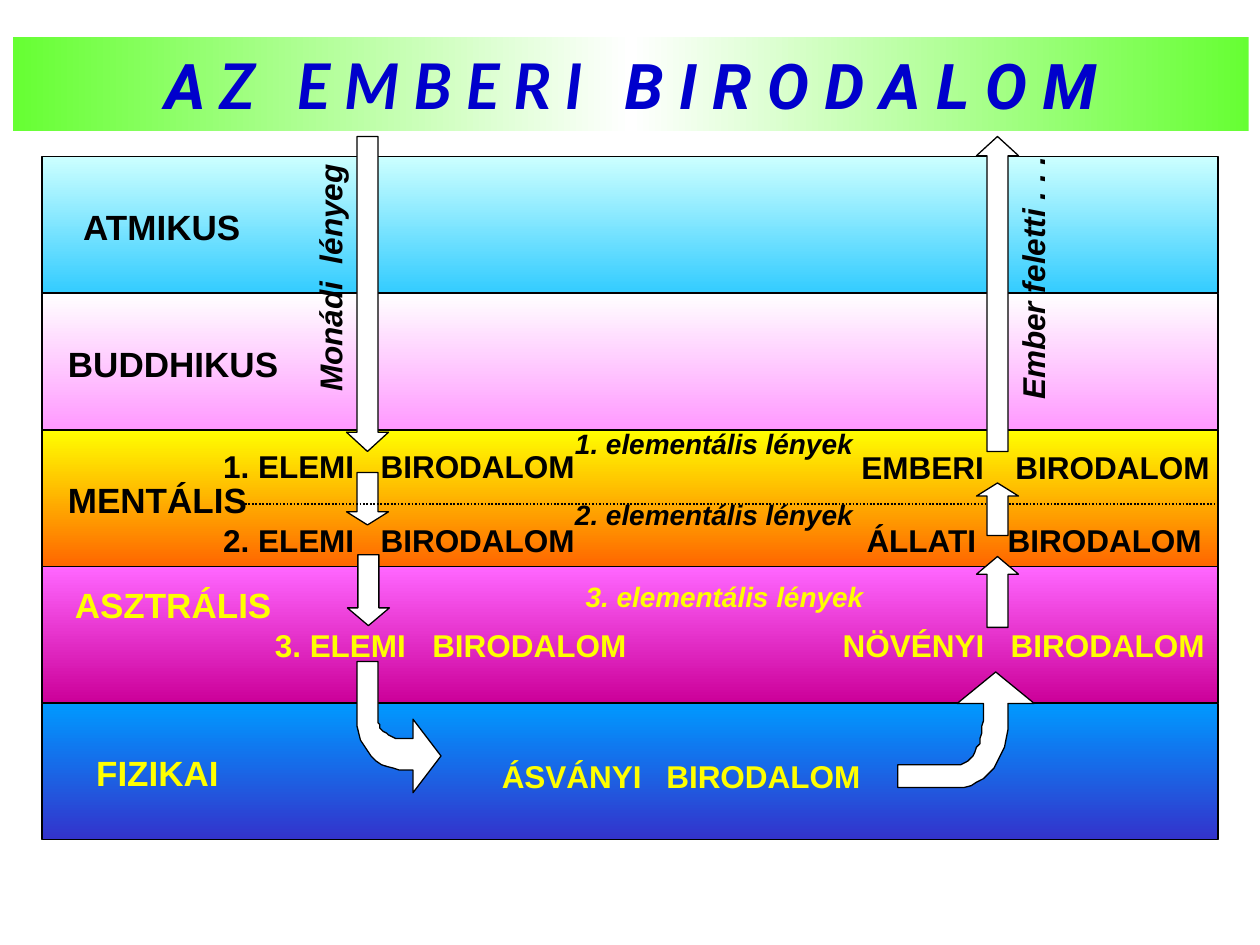
import copy
import pptx
import pptx.util
import pptx.dml.color
import pptx.enum.dml
import pptx.enum.shapes
import pptx.enum.text
import pptx.oxml
import pptx.oxml.ns

Pt = pptx.util.Pt
RGB = pptx.dml.color.RGBColor.from_string
SHAPES = pptx.enum.shapes.MSO_SHAPE
CENTER = pptx.enum.text.PP_ALIGN.CENTER
COLORS = {
    "black": "000000", "white": "FFFFFF", "yellow": "FFFF00", "title": "0000CC",
    "green": "66FF33", "ice": "CCFFFF", "sky": "33CCFF", "pink": "FF99FF",
    "orange": "FF6600", "orchid": "FF66FF", "magenta": "CC0099",
    "azure": "0099FF", "indigo": "3333CC",
}


def outline(shape):
    shape.shadow.inherit = False
    shape.line.color.rgb = RGB(COLORS["black"])
    shape.line.width = Pt(0.75)


def add_arrow(kind, left, top, height, head):
    arrow = page.shapes.add_shape(kind, Pt(left), Pt(top), Pt(24), Pt(height))
    arrow.adjustments[0] = 0.5
    arrow.adjustments[1] = head
    arrow.fill.solid()
    arrow.fill.fore_color.rgb = RGB(COLORS["white"])
    outline(arrow)


deck = pptx.Presentation()
deck.slide_width, deck.slide_height = Pt(720), Pt(540)
page = deck.slides.add_slide(deck.slide_layouts[5])

# Title bar, green fading to white in the middle
title = page.shapes.title
title.left, title.top, title.width, title.height = Pt(7.2), Pt(21), Pt(706.3), Pt(54)
title.fill.gradient()
title.fill.gradient_angle = 0
for stop in title.fill.gradient_stops:
    stop.color.rgb = RGB(COLORS["green"])
stop_list = title.element.spPr.find(".//" + pptx.oxml.ns.qn("a:gsLst"))
stop_list.insert(1, copy.deepcopy(stop_list[0]))
middle = title.fill.gradient_stops[1]
middle.position = 0.5
middle.color.rgb = RGB(COLORS["white"])
title.text_frame.vertical_anchor = pptx.enum.text.MSO_ANCHOR.MIDDLE
para = title.text_frame.paragraphs[0]
para.alignment = CENTER
for words, font, gap in [("A", "Roboto", 0), (" Z", "Lato", 0), (" ", "Lato", 16),
                         ("E M B E R I", "Lato", 0), (" ", "Lato", 16),
                         ("B I R O D A L O M", "Roboto", 0)]:
    span = para.add_run()
    span.text = words
    span.font.name = font
    span.font.size = Pt(36)
    span.font.bold = span.font.italic = True
    span.font.color.rgb = RGB(COLORS["title"])
    if gap:
        span.font._element.set("spc", str(gap * 100))

# Five planes, top to bottom
planes = [("ice", "sky"), ("white", "pink"), ("yellow", "orange"),
          ("orchid", "magenta"), ("azure", "indigo")]
for row, shades in enumerate(planes):
    band = page.shapes.add_shape(SHAPES.RECTANGLE, Pt(24), Pt(89.5 + 78.1 * row),
                                 Pt(672), Pt(78))
    band.fill.gradient()
    band.fill.gradient_angle = 270
    for place, (stop, shade) in enumerate(zip(band.fill.gradient_stops, shades)):
        stop.position = place
        stop.color.rgb = RGB(COLORS[shade])
    outline(band)

# Dotted divider of the mental plane, above the small left arrow
add_arrow(SHAPES.DOWN_ARROW, 198, 270, 30, 0.312)
divider = page.shapes.add_connector(pptx.enum.shapes.MSO_CONNECTOR.STRAIGHT,
                                    Pt(138), Pt(288), Pt(696), Pt(288))
divider.line.color.rgb = RGB(COLORS["black"])
divider.line.width = Pt(1)
divider.line.dash_style = pptx.enum.dml.MSO_LINE.ROUND_DOT
divider.element.spPr.append(pptx.oxml.parse_xml(
    f'<a:effectLst {pptx.oxml.ns.nsdecls("a")}/>'))

# Labels: words, left, top, width, size, color, italic, rotation, extra gap at "|"
labels = [
    ("ATMIKUS", 34.5, 114, 116, 20, "black", False, 0, 0),
    ("BUDDHIKUS", 30, 192, 138, 20, "black", False, 0, 0),
    ("MENTÁLIS", 30, 270, 120, 20, "black", False, 0, 0),
    ("ASZTRÁLIS", 30, 330, 138, 20, "yellow", False, 0, 0),
    ("FIZIKAI", 30, 426, 120, 20, "yellow", False, 0, 0),
    ("1. ELEMI|BIRODALOM", 120, 252, 216, 18, "black", False, 0, 10),
    ("2. ELEMI|BIRODALOM", 120, 294, 216, 18, "black", False, 0, 10),
    ("3. ELEMI|BIRODALOM", 120, 354, 275, 18, "yellow", False, 0, 10),
    ("ÁSVÁNYI|BIRODALOM", 274.5, 429, 229.5, 18, "yellow", False, 0, 9),
    ("NÖVÉNYI|BIRODALOM", 474, 354, 222, 18, "yellow", False, 0, 10),
    ("EMBERI|BIRODALOM", 481.5, 252.5, 220.5, 18, "black", False, 0, 13),
    ("ÁLLATI|BIRODALOM", 486, 294, 210, 18, "black", False, 0, 13),
    ("1. elementális lények", 318, 240, 180, 16, "black", True, 0, 0),
    ("2. elementális lények", 318, 281, 180, 16, "black", True, 0, 0),
    ("3. elementális lények", 318, 327.5, 192, 16, "yellow", True, 0, 0),
    ("Monádi|lényeg", 107.5, 144.5, 162, 18, "black", True, 270, 5),
    ("Ember feletti . . .", 509, 144.5, 162, 18, "black", True, 270, 0),
]
for words, left, top, width, size, color, italic, rotation, gap in labels:
    box = page.shapes.add_textbox(Pt(left), Pt(top), Pt(width), Pt(size * 1.2 + 7.2))
    box.rotation = rotation
    box.text_frame.word_wrap = False
    para = box.text_frame.paragraphs[0]
    para.alignment = CENTER
    for piece in words.replace("|", "| |").split("|"):
        span = para.add_run()
        span.text = piece
        span.font.name = "Arial"
        span.font.size = Pt(size)
        span.font.bold = True
        span.font.italic = italic
        span.font.color.rgb = RGB(COLORS[color])
        if piece == " ":
            span.font._element.set("spc", str(gap * 100))

# Straight arrows: descent on the left, ascent on the right
for kind, left, top, height, head in [
        (SHAPES.DOWN_ARROW, 198, 78, 180, 0.458),
        (SHAPES.DOWN_ARROW, 198.5, 317, 40.5, 0.422),
        (SHAPES.UP_ARROW, 558, 318, 40.5, 0.422),
        (SHAPES.UP_ARROW, 558, 276, 30, 0.312),
        (SHAPES.UP_ARROW, 558, 78, 180, 0.458)]:
    add_arrow(kind, left, top, height, head)

# Bent arrows: a pair is a corner, three pairs are a Bezier curve
bent_arrows = [
    [(252, 432), (236.5, 453), (236.5, 440.5), (232, 440.5),
     ((217, 440.5), (204, 428), (204, 411)), (204, 378), (216, 378), (216, 411),
     ((216, 417.5), (223, 422.5), (232, 422.5)), (236.5, 422.5), (236.5, 411)],
    [(569, 384), (591, 402.5), (576.5, 402.5), (576.5, 412),
     ((576.5, 433), (563, 450), (547, 450)), (513, 450), (513, 437), (547, 437),
     ((555, 437), (561.5, 426), (561.5, 412)), (561.5, 402.5), (547, 402.5)],
]
for outline_steps in bent_arrows:
    points = []
    for step in outline_steps:
        if len(step) == 2:
            points.append(step)
            continue
        start = points[-1]
        for part in range(1, 13):
            t = part / 12
            weights = ((1 - t) ** 3, 3 * t * (1 - t) ** 2, 3 * t ** 2 * (1 - t), t ** 3)
            points.append(tuple(sum(w * p[axis] for w, p in zip(weights, (start, *step)))
                                for axis in (0, 1)))
    builder = page.shapes.build_freeform(*points[0], scale=Pt(1))
    builder.add_line_segments(points[1:], close=True)
    bend = builder.convert_to_shape()
    bend.fill.solid()
    bend.fill.fore_color.rgb = RGB(COLORS["white"])
    outline(bend)

deck.save("out.pptx")
